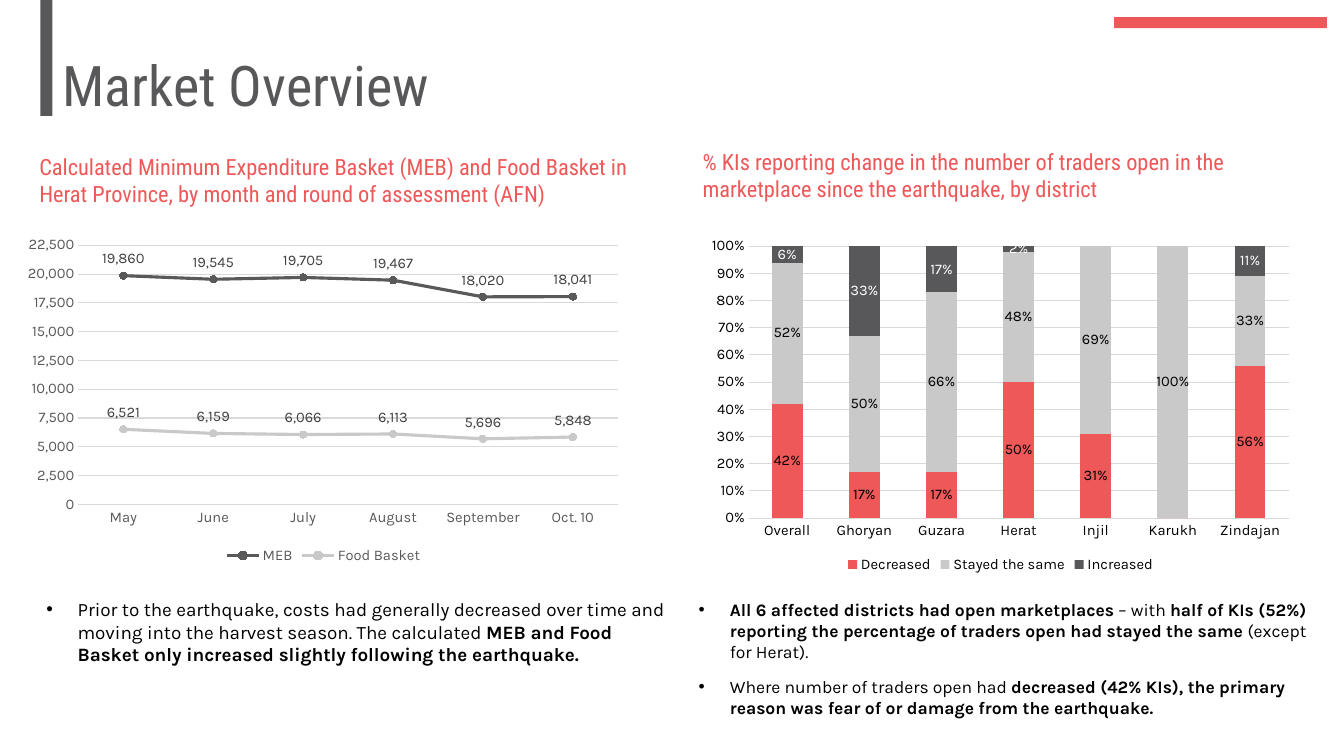
import pptx
import pptx.chart.data
import pptx.dml.color
import pptx.enum.chart
import pptx.enum.shapes
import pptx.enum.text
import pptx.oxml
import pptx.util
from pptx.util import Inches

COLORS = {"red": "EE5859", "dark": "58585A", "light": "C9C9C9", "grid": "D9D9D9",
          "axis": "595959", "label": "404040", "black": "000000", "white": "FFFFFF",
          "marker": "A5A5A5"}
HEADING_FONT = "Roboto Condensed"
BODY_FONT = "Karla"
CHART_SIZE = 10.5
CHART_NAMESPACE = "http://schemas.openxmlformats.org/drawingml/2006/chart"


def rgb(name):
    return pptx.dml.color.RGBColor.from_string(COLORS[name])


def format_font(font, size, color, name=BODY_FONT, bold=False):
    font.size = pptx.util.Pt(size)
    font.name = name
    font.bold = bold
    font.color.rgb = rgb(color)


def format_line(line, color, width=0.75):
    line.color.rgb = rgb(color)
    line.width = pptx.util.Pt(width)


def add_bar(slide, color, *box):
    shape = slide.shapes.add_shape(pptx.enum.shapes.MSO_SHAPE.RECTANGLE, *map(Inches, box))
    shape.shadow.inherit = False
    shape.fill.solid()
    shape.fill.fore_color.rgb = rgb(color)
    shape.line.fill.background()


def set_title(slide, text):
    title = slide.shapes.title
    title.left, title.top, title.width, title.height = map(Inches, (0.52, 0.54, 12.39, 0.67))
    frame = title.text_frame
    frame.text = text
    frame.auto_size = pptx.enum.text.MSO_AUTO_SIZE.NONE
    frame.vertical_anchor = pptx.enum.text.MSO_ANCHOR.MIDDLE
    paragraph = frame.paragraphs[0]
    paragraph.alignment = pptx.enum.text.PP_ALIGN.LEFT
    paragraph.line_spacing = 0.9
    format_font(paragraph.runs[0].font, 40, "dark", HEADING_FONT)


def add_bullet(paragraph):
    properties = paragraph._p.get_or_add_pPr()
    properties.set("marL", str(Inches(0.31)))
    properties.set("indent", str(-Inches(0.31)))
    namespace = "http://schemas.openxmlformats.org/drawingml/2006/main"
    properties.append(pptx.oxml.parse_xml(f'<a:buFont xmlns:a="{namespace}" typeface="Arial"/>'))
    properties.append(pptx.oxml.parse_xml(f'<a:buChar xmlns:a="{namespace}" char="•"/>'))


def add_text(slide, paragraphs, box, size, color="black", font=BODY_FONT, bullets=False):
    """Each paragraph is a list of (text, bold) runs."""
    frame = slide.shapes.add_textbox(*map(Inches, box)).text_frame
    frame.word_wrap = True
    frame.margin_left = frame.margin_right = Inches(0.07)
    frame.margin_top = frame.margin_bottom = Inches(0.04)
    for index, runs in enumerate(paragraphs):
        paragraph = frame.add_paragraph() if index else frame.paragraphs[0]
        paragraph.space_before = pptx.util.Pt(10)
        if bullets:
            add_bullet(paragraph)
        for text, bold in runs:
            run = paragraph.add_run()
            run.text = text
            format_font(run.font, size, color, font, bold)


def set_plot_layout(chart, **fractions):
    """Fix the inner plot area as fractions of the chart."""
    plot_area = chart._chartSpace.chart.plotArea
    for layout in plot_area.findall(f"{{{CHART_NAMESPACE}}}layout"):
        plot_area.remove(layout)
    sides = "".join(f'<c:{side}Mode val="edge"/>' for side in "xy")
    sides += "".join(f'<c:{key} val="{value}"/>' for key, value in fractions.items())
    plot_area.insert(0, pptx.oxml.parse_xml(
        f'<c:layout xmlns:c="{CHART_NAMESPACE}"><c:manualLayout>'
        f'<c:layoutTarget val="inner"/>{sides}</c:manualLayout></c:layout>'))


def add_chart(slide, kind, box, categories, series, text_color, number_format, maximum, step):
    data = pptx.chart.data.CategoryChartData()
    data.categories = categories
    for name, values in series.items():
        data.add_series(name, values)
    chart = slide.shapes.add_chart(kind, *map(Inches, box), data).chart
    chart.has_title = False
    format_font(chart.font, CHART_SIZE, text_color)
    chart.has_legend = True
    chart.legend.position = pptx.enum.chart.XL_LEGEND_POSITION.BOTTOM
    chart.legend.include_in_layout = False
    format_font(chart.legend.font, CHART_SIZE, text_color)
    for axis in (chart.category_axis, chart.value_axis):
        axis.major_tick_mark = axis.minor_tick_mark = pptx.enum.chart.XL_TICK_MARK.NONE
        format_font(axis.tick_labels.font, CHART_SIZE, text_color)
    format_line(chart.category_axis.format.line, "grid")
    value_axis = chart.value_axis
    value_axis.format.line.fill.background()
    value_axis.minimum_scale, value_axis.maximum_scale = 0, maximum
    value_axis.major_unit = step
    value_axis.has_major_gridlines = True
    format_line(value_axis.major_gridlines.format.line, "grid")
    value_axis.tick_labels.number_format = number_format
    value_axis.tick_labels.number_format_is_linked = False
    chart.plots[0].vary_by_categories = False
    return chart


def add_labels(series, color, number_format, position):
    labels = series.data_labels
    labels.show_value = True
    labels.position = position
    labels.number_format = number_format
    labels.number_format_is_linked = False
    format_font(labels.font, CHART_SIZE, color)


def add_basket_chart(slide):
    chart = add_chart(
        slide, pptx.enum.chart.XL_CHART_TYPE.LINE_MARKERS, (0.17, 2.3, 6.08, 3.34),
        ["May", "June", "July", "August", "September", "Oct. 10"],
        {"MEB": [19860, 19545, 19705, 19467, 18020, 18041],
         "Food Basket": [6521, 6159, 6066, 6113, 5696, 5848]},
        "axis", "#,##0", 22500, 2500)
    set_plot_layout(chart, x=0.1, y=0.04, w=0.88, h=0.77)
    styles = (("axis", "axis"), ("light", "light"))
    for series, (line_color, marker_color) in zip(chart.plots[0].series, styles):
        series.smooth = False
        format_line(series.format.line, line_color, 2.25)
        series.marker.style = pptx.enum.chart.XL_MARKER_STYLE.CIRCLE
        series.marker.size = 5
        series.marker.format.fill.solid()
        series.marker.format.fill.fore_color.rgb = rgb(marker_color)
        format_line(series.marker.format.line, marker_color)
        add_labels(series, "label", "#,##0", pptx.enum.chart.XL_LABEL_POSITION.ABOVE)


def add_traders_chart(slide):
    chart = add_chart(
        slide, pptx.enum.chart.XL_CHART_TYPE.COLUMN_STACKED_100, (6.95, 2.27, 5.95, 3.46),
        ["Overall", "Ghoryan", "Guzara", "Herat", "Injil", "Karukh", "Zindajan"],
        {"Decreased": [0.42, 0.17, 0.17, 0.5, 0.31, 0, 0.56],
         "Stayed the same": [0.52, 0.5, 0.66, 0.48, 0.69, 1, 0.33],
         "Increased": [0.06, 0.33, 0.17, 0.02, 0, 0, 0.11]},
        "black", "0%", 1, 0.1)
    set_plot_layout(chart, x=0.08, y=0.05, w=0.9, h=0.78)
    chart.plots[0].gap_width = 150
    chart.plots[0].overlap = 100
    styles = (("red", "black"), ("light", "black"), ("dark", "white"))
    for series, (fill_color, label_color) in zip(chart.plots[0].series, styles):
        series.format.fill.solid()
        series.format.fill.fore_color.rgb = rgb(fill_color)
        # The empty format sections hide the labels of zero values
        add_labels(series, label_color, "0%;;", pptx.enum.chart.XL_LABEL_POSITION.CENTER)


def main():
    presentation = pptx.Presentation()
    presentation.slide_width, presentation.slide_height = Inches(13.33), Inches(7.5)
    slide = presentation.slides.add_slide(presentation.slide_layouts[5])
    add_bar(slide, "red", 11.05, 0.17, 2.11, 0.11)
    add_bar(slide, "dark", 0.4, 0, 0.12, 1.15)
    set_title(slide, "Market Overview")

    headings = (
        ("Calculated Minimum Expenditure Basket (MEB) and Food Basket in Herat Province, "
         "by month and round of assessment (AFN)", (0.32, 1.48, 6.11, 0.92)),
        ("% KIs reporting change in the number of traders open in the marketplace "
         "since the earthquake, by district", (6.9, 1.43, 5.94, 0.65)))
    for text, box in headings:
        add_text(slide, [[(text, False)]], box, size=16, color="red", font=HEADING_FONT)

    add_basket_chart(slide)
    add_traders_chart(slide)

    add_text(slide, [[
        ("Prior to the earthquake, costs had generally decreased over time and moving into "
         "the harvest season. The calculated ", False),
        ("MEB and Food Basket only increased slightly following the earthquake.", True),
    ]], (0.39, 5.89, 6.28, 1.5), size=13.5, bullets=True)
    add_text(slide, [[
        ("All 6 affected districts had open marketplaces", True),
        (" – with ", False),
        ("half of KIs (52%) reporting the percentage of traders open had stayed the same ", True),
        ("(except for Herat).", False),
    ], [
        ("Where number of traders open had ", False),
        ("decreased (42% KIs), the primary reason was fear of or damage from the earthquake.",
         True),
    ]], (6.86, 5.9, 6.28, 1.18), size=12.5, bullets=True)
    presentation.save("out.pptx")


if __name__ == "__main__":
    main()
